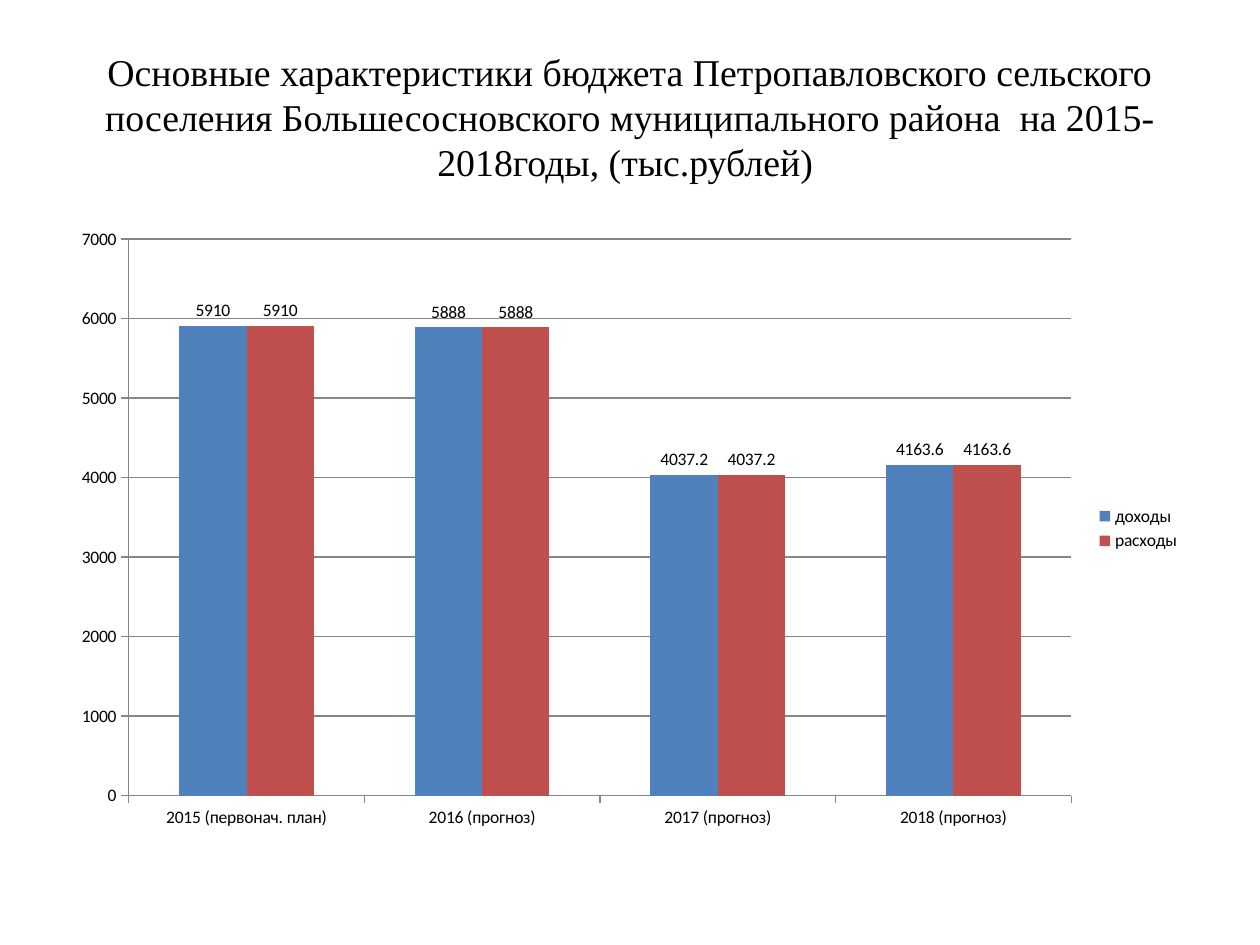
from pptx import Presentation
from pptx.chart.data import CategoryChartData
from pptx.dml.color import RGBColor
from pptx.enum import chart as ch, text
from pptx.util import Cm, Pt

TITLE = ("Основные характеристики бюджета Петропавловского сельского поселения "
         "Большесосновского муниципального района  на 2015-2018годы, (тыс.рублей) ")
YEARS = ["2015 (первонач. план)", "2016 (прогноз)", "2017 (прогноз)", "2018 (прогноз)"]
SUMS = [5910, 5888, 4037.2, 4163.6]
SERIES = {"доходы": "4F81BD", "расходы": "C0504D"}


def tint(code):
    """Turn a hex string into a colour."""
    return RGBColor.from_string(code)


def style(font, name, size):
    """Set face, size and black colour."""
    font.name, font.size = name, Pt(size)
    font.color.rgb = tint("000000")


def add_title(slide, box):
    """Place the centred heading in the box."""
    frame = slide.shapes.add_textbox(*box).text_frame
    frame.word_wrap = True
    frame.vertical_anchor = text.MSO_ANCHOR.MIDDLE
    para = frame.paragraphs[0]
    para.alignment = text.PP_ALIGN.CENTER
    run = para.add_run()
    run.text = TITLE
    style(run.font, "Times New Roman", 21.6)


def add_bars(slide, box):
    """Place the budget column chart in the box."""
    data = CategoryChartData()
    data.categories = YEARS
    for name in SERIES:
        data.add_series(name, SUMS)
    kind = ch.XL_CHART_TYPE.COLUMN_CLUSTERED
    chart = slide.shapes.add_chart(kind, *box, data).chart
    style(chart.font, "Calibri", 10)
    chart.has_title = False
    chart.has_legend = True
    chart.legend.position = ch.XL_LEGEND_POSITION.RIGHT
    chart.legend.include_in_layout = False
    amount = chart.value_axis
    amount.minimum_scale, amount.maximum_scale, amount.major_unit = 0, 7000, 1000
    for axis in (chart.category_axis, amount):
        axis.major_tick_mark = ch.XL_TICK_MARK.OUTSIDE
        axis.format.line.color.rgb = tint("868686")
        axis.format.line.width = Pt(0.75)
    grid = amount.major_gridlines.format.line
    grid.color.rgb, grid.width = tint("868686"), Pt(0.75)
    plot = chart.plots[0]
    plot.vary_by_categories = False
    plot.gap_width, plot.overlap = 150, 0
    for bar, code in zip(plot.series, SERIES.values()):
        bar.format.fill.solid()
        bar.format.fill.fore_color.rgb = tint(code)
        bar.data_labels.show_value = True
        bar.data_labels.position = ch.XL_LABEL_POSITION.OUTSIDE_END


def main():
    """Build and save the slide."""
    deck = Presentation()
    deck.slide_width, deck.slide_height = Cm(25.4), Cm(19.05)
    slide = deck.slides.add_slide(deck.slide_layouts[6])
    add_title(slide, (Cm(1.27), Cm(0.76), Cm(22.86), Cm(3.18)))
    add_bars(slide, (Cm(1.19), Cm(4.37), Cm(22.86), Cm(12.57)))
    deck.save("out.pptx")


if __name__ == "__main__":
    main()
